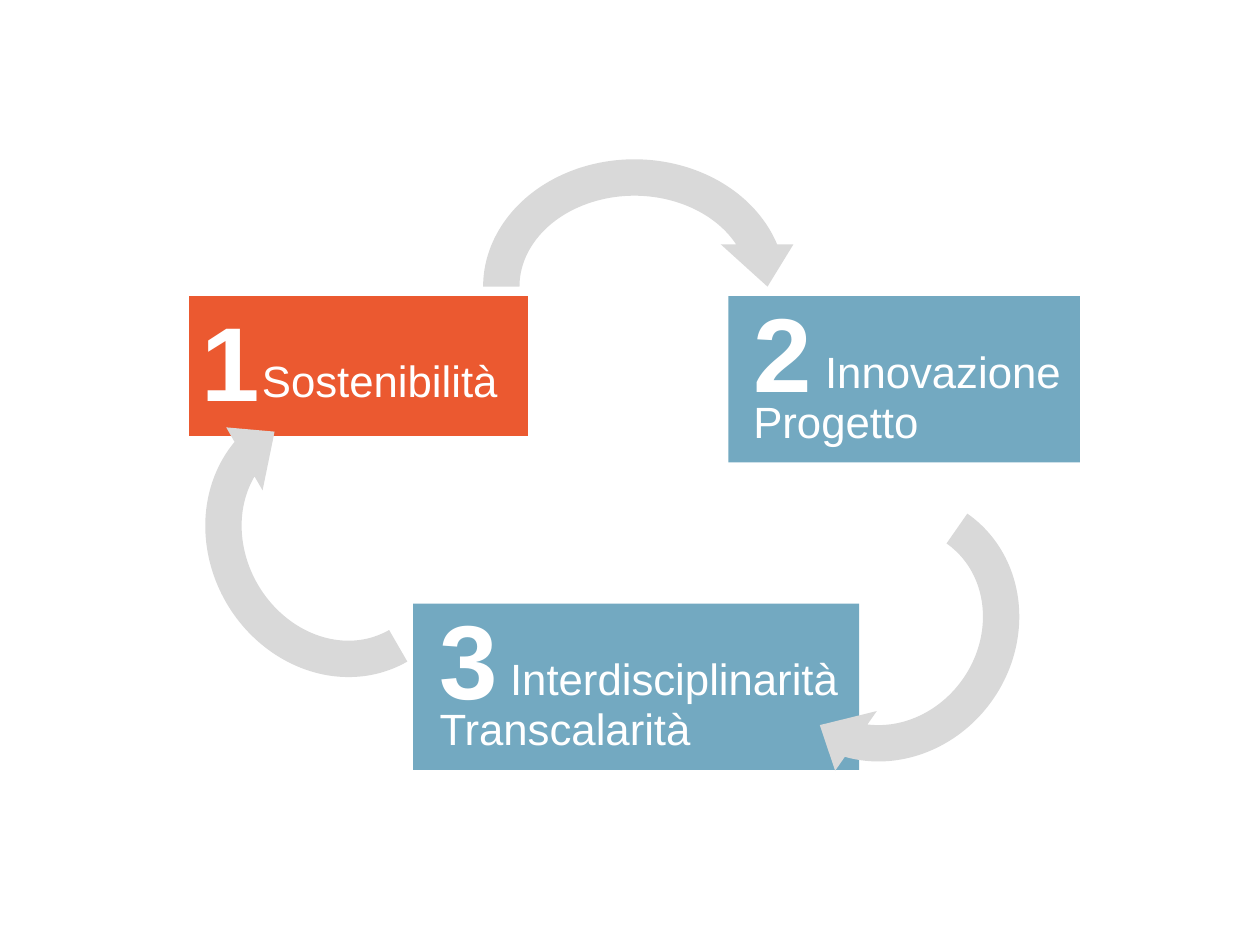
from pptx import Presentation
from pptx import util as u
from pptx.dml.color import RGBColor
from pptx.enum import shapes, text

CARDS = [
    ("EB5930", (1.5, 2.35, 2.69, 1.11), [
        ("1", 1.5, 2.3, 0.43),
        ("Sostenibilità", 1.98, 2.76, 2.12)]),
    ("73A9C1", (5.78, 2.35, 2.79, 1.32), [
        ("2", 5.88, 2.23, 0.43),
        ("Innovazione", 6.45, 2.69, 2.12),
        ("Progetto", 5.88, 3.08, 2.12)]),
    ("73A9C1", (3.28, 4.79, 3.54, 1.32), [
        ("3", 3.39, 4.67, 0.43),
        ("Interdisciplinarità", 3.95, 5.12, 2.88),
        ("Transcalarità", 3.39, 5.52, 2.39)]),
]
ARROWS = [
    ((3.69, 1.12, 2.69, 2.31), 0),
    ((5.81, 3.82, 2.48, 2.31), 124.9),
    ((1.4, 3.12, 2.54, 2.31), 240),
]


def paint(color, hex_color):
    color.rgb = RGBColor.from_string(hex_color)


def add_filled(parent, kind, box, hex_color):
    sp = parent.add_shape(kind, *map(u.Inches, box))
    sp.shadow.inherit = False
    sp.fill.solid()
    paint(sp.fill.fore_color, hex_color)
    sp.line.fill.background()
    return sp


def add_label(parent, words, left, top, width):
    is_number = words.isdigit()
    height = 1.11 if is_number else 0.52
    tf = parent.add_textbox(*map(u.Inches, (left, top, width, height))).text_frame
    tf.word_wrap = True
    tf.auto_size = text.MSO_AUTO_SIZE.SHAPE_TO_FIT_TEXT
    p = tf.paragraphs[0]
    p.text = words
    p.font.name = "Arial"
    p.font.size = u.Pt(60 if is_number else 25)
    p.font.bold = is_number
    paint(p.font.color, "FFFFFF")


prs = Presentation()
prs.slide_width, prs.slide_height = u.Inches(10), u.Inches(7.5)
s = prs.slides.add_slide(prs.slide_layouts[6])

for hex_color, box, labels in CARDS:
    group = s.shapes.add_group_shape().shapes
    add_filled(group, shapes.MSO_SHAPE.RECTANGLE, box, hex_color)
    for label in labels:
        add_label(group, *label)

for box, rotation in ARROWS:
    sp = add_filled(s.shapes, shapes.MSO_SHAPE.CIRCULAR_ARROW, box, "D9D9D9")
    sp.rotation = rotation

prs.save("out.pptx")
